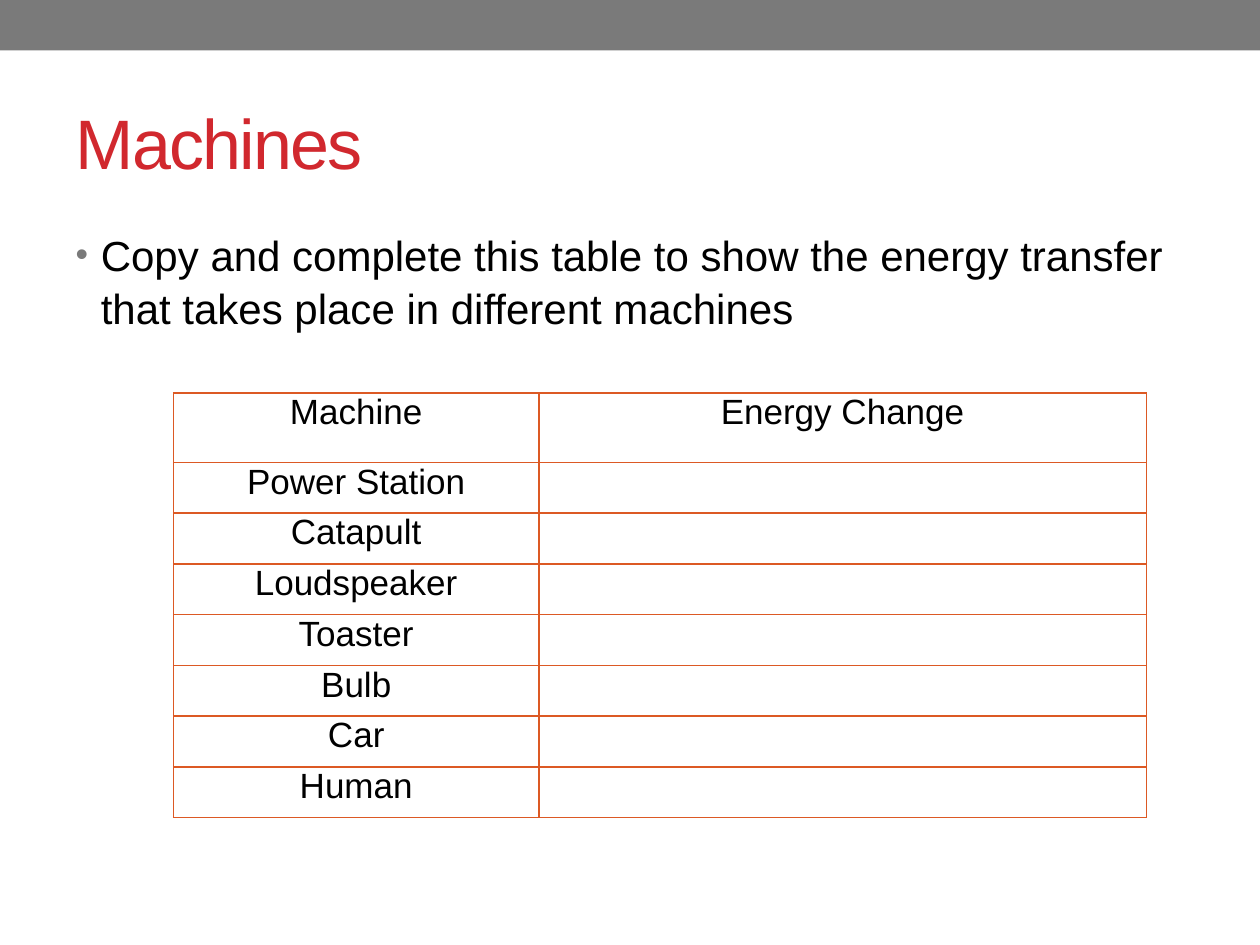
from lxml import etree
from pptx import Presentation
from pptx.dml.color import RGBColor
from pptx.enum.shapes import MSO_SHAPE
from pptx.enum.text import MSO_ANCHOR, PP_ALIGN
from pptx.oxml.ns import qn
from pptx.util import Pt

# Content
TITLE = "Machines"
TASK = ("Copy and complete this table to show the energy transfer "
        "that takes place in different machines")
HEADINGS = ("Machine", "Energy Change")
MACHINES = ("Power Station", "Catapult", "Loudspeaker", "Toaster",
            "Bulb", "Car", "Human")

# Style
FONT = "Arial"
GREY = RGBColor(0x7A, 0x7A, 0x7A)
RED = RGBColor(0xD1, 0x28, 0x2E)
ORANGE = RGBColor(0xDC, 0x59, 0x24)
BLACK = RGBColor(0, 0, 0)
LEFT, CENTER = PP_ALIGN.LEFT, PP_ALIGN.CENTER
TOP, MIDDLE = MSO_ANCHOR.TOP, MSO_ANCHOR.MIDDLE
RECTANGLE = MSO_SHAPE.RECTANGLE

# Layout in points
SLIDE_WIDTH, SLIDE_HEIGHT = 720, 540
BAND_HEIGHT = 28.8
MARGIN = 36
CONTENT_WIDTH = SLIDE_WIDTH - 2 * MARGIN
TABLE_LEFT, TABLE_TOP = 99.2, 224.6
COLUMN_WIDTHS = (208.7, 347.2)
HEADER_HEIGHT, ROW_HEIGHT = 39.6, 29
BULLET_INDENT = 14.4


def place(shape, left, top, width, height):
    shape.left, shape.top = Pt(left), Pt(top)
    shape.width, shape.height = Pt(width), Pt(height)


def write(paragraph, text, size, color, alignment):
    paragraph.alignment = alignment
    run = paragraph.add_run()
    run.text = text
    run.font.name, run.font.size = FONT, Pt(size)
    run.font.color.rgb = color
    return run


def add_bullet(paragraph):
    properties = paragraph._p.get_or_add_pPr()
    properties.set("marL", str(Pt(BULLET_INDENT)))
    properties.set("indent", str(-Pt(BULLET_INDENT)))
    color = etree.SubElement(properties, qn("a:buClr"))
    etree.SubElement(color, qn("a:srgbClr"), val=str(GREY))
    etree.SubElement(properties, qn("a:buSzPct"), val="85000")
    etree.SubElement(properties, qn("a:buFont"), typeface=FONT)
    etree.SubElement(properties, qn("a:buChar"), char="•")


def add_borders(cell):
    properties = cell._tc.get_or_add_tcPr()
    for index, side in enumerate(("a:lnL", "a:lnR", "a:lnT", "a:lnB")):
        line = etree.Element(qn(side), w=str(Pt(1)))
        fill = etree.SubElement(line, qn("a:solidFill"))
        etree.SubElement(fill, qn("a:srgbClr"), val=str(ORANGE))
        properties.insert(index, line)


def add_band(slide):
    band = slide.shapes.add_shape(
        RECTANGLE, 0, 0, Pt(SLIDE_WIDTH), Pt(BAND_HEIGHT))
    band.shadow.inherit = False
    band.fill.solid()
    band.fill.fore_color.rgb = GREY
    band.line.fill.background()


def fill_placeholders(slide):
    title, body = slide.placeholders
    place(title, MARGIN, 41.8, CONTENT_WIDTH, 77.8)
    title.text_frame.vertical_anchor = MIDDLE
    run = write(title.text_frame.paragraphs[0], TITLE, 40, RED, LEFT)
    run.font._element.set("spc", "-100")

    place(body, MARGIN, 126, CONTENT_WIDTH, 383.8)
    body.text_frame.vertical_anchor = TOP
    paragraph = body.text_frame.paragraphs[0]
    write(paragraph, TASK, 24, BLACK, LEFT)
    paragraph.space_before = Pt(4.8)
    paragraph.line_spacing = 1.05
    add_bullet(paragraph)


def add_machine_table(slide):
    rows = [HEADINGS] + [(machine, "") for machine in MACHINES]
    heights = [HEADER_HEIGHT] + [ROW_HEIGHT] * len(MACHINES)
    table = slide.shapes.add_table(
        len(rows), len(HEADINGS), Pt(TABLE_LEFT), Pt(TABLE_TOP),
        Pt(sum(COLUMN_WIDTHS)), Pt(sum(heights))).table
    table.first_row = table.horz_banding = False
    for column, width in zip(table.columns, COLUMN_WIDTHS):
        column.width = Pt(width)
    for row, height, texts in zip(table.rows, heights, rows):
        row.height = Pt(height)
        for cell, text in zip(row.cells, texts):
            cell.margin_left = cell.margin_right = Pt(5)
            cell.margin_top = cell.margin_bottom = 0
            cell.vertical_anchor = TOP
            cell.fill.background()
            add_borders(cell)
            if text:
                write(cell.text_frame.paragraphs[0], text, 20, BLACK, CENTER)


def main():
    presentation = Presentation()
    presentation.slide_width = Pt(SLIDE_WIDTH)
    presentation.slide_height = Pt(SLIDE_HEIGHT)
    slide = presentation.slides.add_slide(presentation.slide_layouts[1])
    add_band(slide)
    fill_placeholders(slide)
    add_machine_table(slide)
    presentation.save("out.pptx")


if __name__ == "__main__":
    main()
